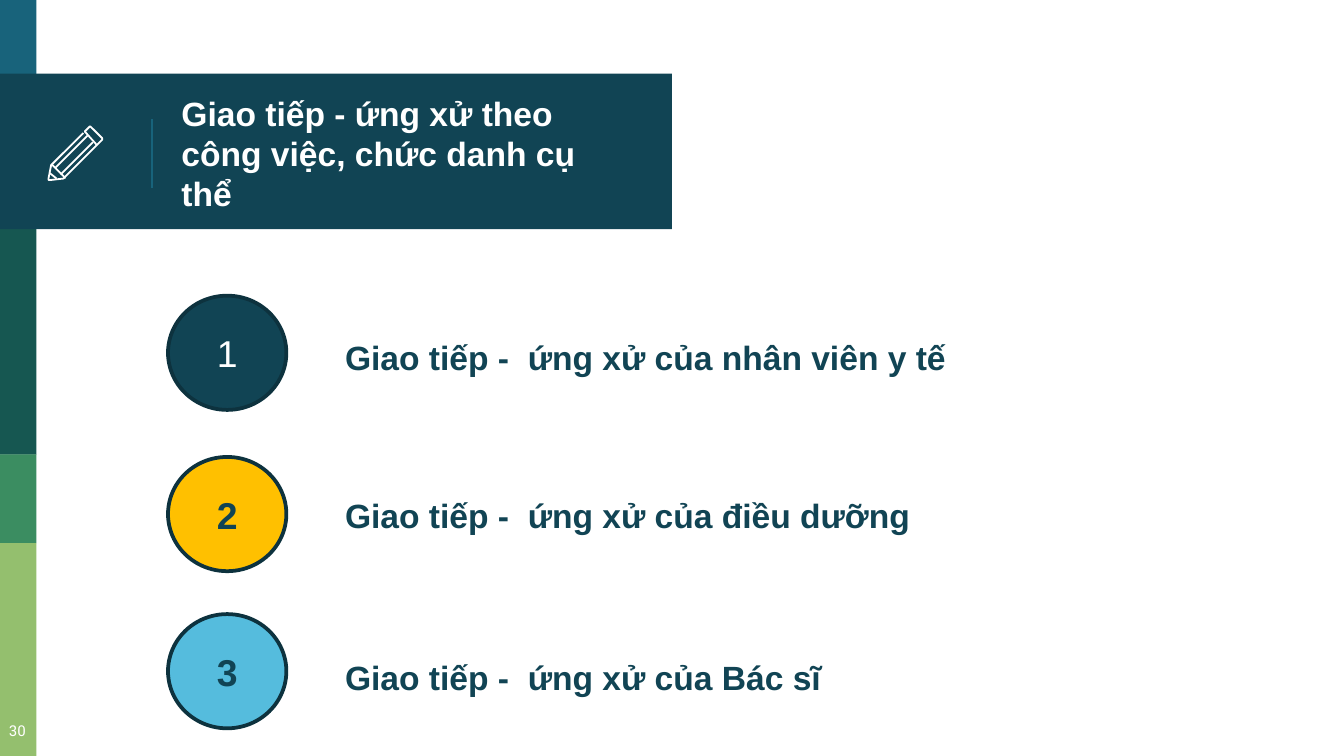
import pptx
import pptx.util
import pptx.dml.color
import pptx.enum.shapes
import pptx.enum.text
import pptx.oxml.ns
import lxml.etree

Pt = pptx.util.Pt
Shape = pptx.enum.shapes.MSO_SHAPE
Align = pptx.enum.text.PP_ALIGN
Anchor = pptx.enum.text.MSO_ANCHOR

NAVY, TEAL, EDGE, WHITE = "114454", "18637B", "0D323E", "FFFFFF"
BANDS = [(0, 42, TEAL), (122.5, 121, "165751"),
         (243.5, 47.5, "3B8D61"), (291, 114, "94BF6E")]
# Circle top, label top, fill, number colour, label
ROWS = [
    (158.4, 151.2, NAVY, WHITE, "Giao tiếp -  ứng xử của nhân viên y tế"),
    (244.8, 235.4, "FFC000", NAVY, "Giao tiếp -  ứng xử của điều dưỡng"),
    (329, 322.6, "55BCDD", NAVY, "Giao tiếp -  ứng xử của Bác sĩ"),
]
# Pencil strokes in hundredths of an inch: points, closed
STROKES = [
    ([(27, 4), (30, 1), (31, 0), (32, 1), (40, 9), (40.5, 9.5),
      (40, 10), (36, 14)], True),
    ([(33, 12), (9, 36)], False),
    ([(26, 5), (2, 29), (0, 39), (0.5, 40), (2, 40), (11, 39),
      (12, 38.5), (36, 14)], False),
    ([(5, 31), (29, 7)], False),
    ([(1, 35), (6, 39)], False),
    ([(2, 29), (3, 29), (12, 38), (12, 39)], False),
]


def tint(hue):
    return pptx.dml.color.RGBColor.from_string(hue)


def paint(shape, fill=None, line=None, width=1):
    shape.shadow.inherit = False
    if fill:
        shape.fill.solid()
        shape.fill.fore_color.rgb = tint(fill)
    else:
        shape.fill.background()
    if line:
        shape.line.color.rgb = tint(line)
        shape.line.width = Pt(width)
    else:
        shape.line.fill.background()


def write(shape, text, size, hue, bold=False, align=Align.LEFT,
          anchor=Anchor.MIDDLE, font="Arial", inset=7.2):
    frame = shape.text_frame
    frame.text = text
    frame.word_wrap = True
    frame.auto_size = pptx.enum.text.MSO_AUTO_SIZE.NONE
    frame.vertical_anchor = anchor
    frame.margin_left = frame.margin_right = Pt(inset)
    frame.margin_top = frame.margin_bottom = Pt(inset)
    para = frame.paragraphs[0]
    para.alignment = align
    style = para.runs[0].font
    style.name, style.size, style.bold = font, Pt(size), bold
    style.color.rgb = tint(hue)


def block(slide, kind, x, y, w, h, fill, line=None, width=1):
    shape = slide.shapes.add_shape(kind, Pt(x), Pt(y), Pt(w), Pt(h))
    paint(shape, fill, line, width)
    return shape


def label(slide, x, y, w, h, *args, **style):
    box = slide.shapes.add_textbox(Pt(x), Pt(y), Pt(w), Pt(h))
    write(box, *args, **style)


def sidebar(slide, x, w):
    for top, high, fill in BANDS:
        block(slide, Shape.RECTANGLE, x, top, w, high, fill)
    label(slide, x - 4.3, 379.4, 27.4, 25.2, "30", 8, WHITE,
          align=Align.CENTER, anchor=Anchor.TOP, font="Roboto Slab")


def pencil(slide, x, y):
    group = slide.shapes.add_group_shape()
    for points, closed in STROKES:
        pen = group.shapes.build_freeform(*points[0], scale=Pt(0.72))
        pen.add_line_segments(points[1:], close=closed)
        paint(pen.convert_to_shape(Pt(x), Pt(y)), line=WHITE, width=0.96)


def banner(slide, x, y, w, h):
    block(slide, Shape.RECTANGLE, x, y, w, h, NAVY)
    rule = slide.shapes.add_connector(
        pptx.enum.shapes.MSO_CONNECTOR.STRAIGHT,
        Pt(x + 81.5), Pt(y + 24.5), Pt(x + 81.5), Pt(y + 61))
    rule.line.color.rgb = tint(TEAL)
    rule.line.width = Pt(0.75)
    props = rule.element.find(pptx.oxml.ns.qn("p:spPr"))
    lxml.etree.SubElement(props, pptx.oxml.ns.qn("a:effectLst"))
    pencil(slide, x + 26, y + 28.1)

    title = slide.shapes.title
    title.left, title.top = Pt(x + 90), Pt(y + 2.2)
    title.width, title.height = Pt(252.7), Pt(80.6)
    write(title, "Giao tiếp - ứng xử theo công việc, chức danh cụ thể",
          18, WHITE, bold=True)
    title.element.getparent().append(title.element)  # in front of the banner


def steps(slide, x):
    for num, (top, text_top, fill, hue, text) in enumerate(ROWS, 1):
        disc = block(slide, Shape.OVAL, x, top, 63.4, 61.2, fill, EDGE, 2)
        write(disc, str(num), 20, hue, bold=num > 1,
              align=Align.CENTER, inset=3.6)
        label(slide, x + 87.8, text_top, 391, 80.6, text, 18, NAVY, bold=True)


def main():
    deck = pptx.Presentation()
    deck.slide_width, deck.slide_height = Pt(720), Pt(405)
    slide = deck.slides.add_slide(deck.slide_layouts[5])
    sidebar(slide, 0, 19.5)
    banner(slide, 0, 39.5, 360, 83.3)
    steps(slide, 90)
    deck.save("out.pptx")


if __name__ == "__main__":
    main()
